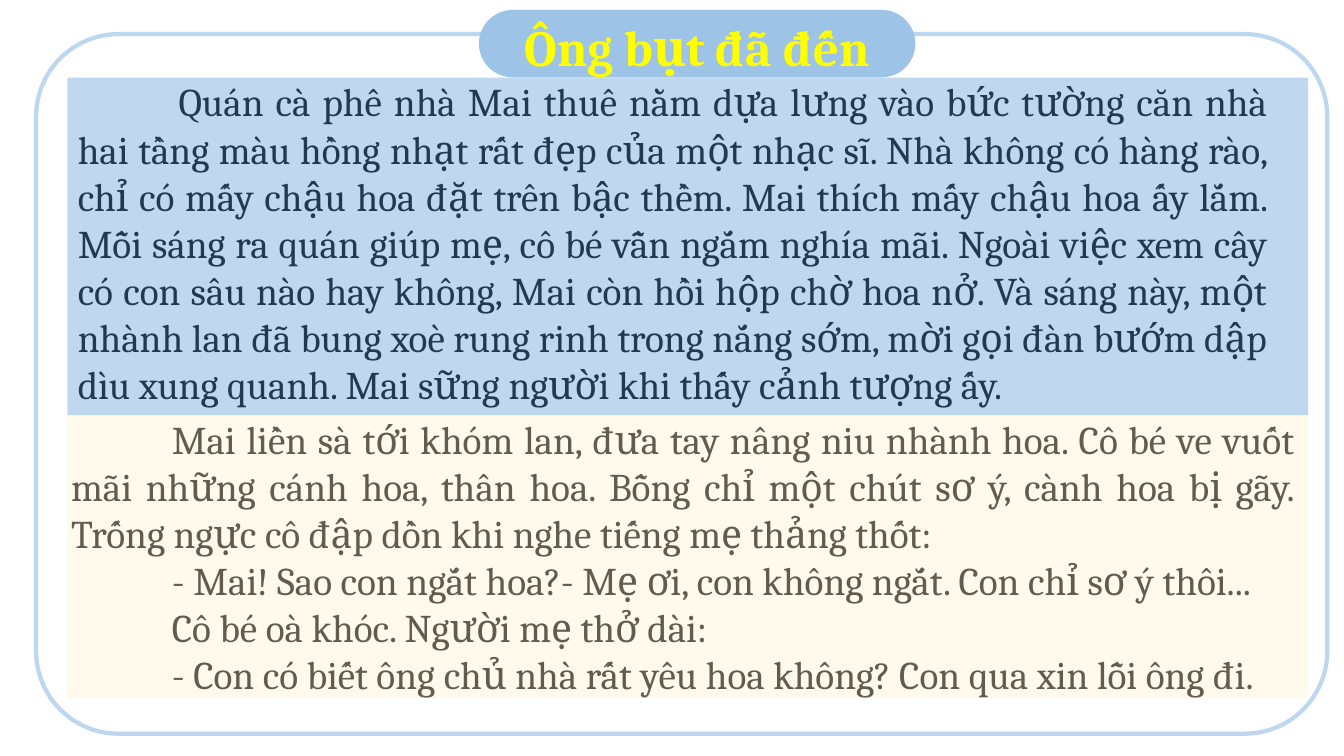
"""Build a Vietnamese reading slide with a title pill and two tinted story passages."""
from dataclasses import dataclass

from lxml import etree
from pptx import Presentation
from pptx.dml.color import RGBColor
from pptx.enum.shapes import MSO_SHAPE
from pptx.enum.text import MSO_ANCHOR, MSO_AUTO_SIZE, PP_ALIGN
from pptx.oxml.ns import qn
from pptx.util import Cm, Pt

RECTANGLE, ROUNDED = MSO_SHAPE.RECTANGLE, MSO_SHAPE.ROUNDED_RECTANGLE
TOP, MIDDLE = MSO_ANCHOR.TOP, MSO_ANCHOR.MIDDLE
CENTER, JUSTIFY = PP_ALIGN.CENTER, PP_ALIGN.JUSTIFY
NO_AUTOFIT = MSO_AUTO_SIZE.NONE

TITLE = "Ông bụt đã đến"
OPENING = [
    "Quán cà phê nhà Mai thuê nằm dựa lưng vào bức tường căn nhà hai tầng màu hồng "
    "nhạt rất đẹp của một nhạc sĩ. Nhà không có hàng rào, chỉ có mấy chậu hoa đặt "
    "trên bậc thềm. Mai thích mấy chậu hoa ấy lắm. Mỗi sáng ra quán giúp mẹ, cô bé "
    "vẫn ngắm nghía mãi. Ngoài việc xem cây có con sâu nào hay không, Mai còn hồi "
    "hộp chờ hoa nở. Và sáng này, một nhành lan đã bung xoè rung rinh trong nắng "
    "sớm, mời gọi đàn bướm dập dìu xung quanh. Mai sững người khi thấy cảnh tượng ấy.",
]
CONTINUATION = [
    "Mai liền sà tới khóm lan, đưa tay nâng niu nhành hoa. Cô bé ve vuốt mãi những "
    "cánh hoa, thân hoa. Bỗng chỉ một chút sơ ý, cành hoa bị gãy. Trống ngực cô đập "
    "dồn khi nghe tiếng mẹ thảng thốt:",
    "- Mai! Sao con ngắt hoa?- Mẹ ơi, con không ngắt. Con chỉ sơ ý thôi...",
    "Cô bé oà khóc. Người mẹ thở dài:",
    "- Con có biết ông chủ nhà rất yêu hoa không? Con qua xin lỗi ông đi.",
]


@dataclass(frozen=True)
class Theme:
    """Colours, type sizes and font of the slide."""
    font: str = "Cambria"
    title_size: int = 36
    body_size: int = 28
    title: str = "FFFF00"
    text: str = "000000"
    paper: str = "FFFFFF"
    frame: str = "BDD7EE"
    pill: str = "9DC3E6"
    opening: str = "5B9BD5"
    continuation: str = "FFF2CC"
    tint_opacity: int = 38


THEME = Theme()
SLIDE_SIZE = (33.87, 19.05)
FRAME_BOX = (0.91, 0.86, 32.54, 17.63)
PILL_BOX = (12.07, 0.25, 11, 1.7)
BAND_LEFT, BAND_WIDTH = 1.7, 31.27
BAND_TOP, BAND_SPLIT, BAND_BOTTOM = 1.96, 10.46, 17.6
OPENING_TEXT_BOX = (1.96, 1.96, 29.97, 8.5)
CONTINUATION_TEXT_BOX = (1.79, BAND_SPLIT, 30.82, BAND_BOTTOM - BAND_SPLIT)
FIRST_LINE_INDENT = 2.54

TITLE_FORMAT = {"size": Pt(THEME.title_size), "bold": True}
BODY_FORMAT = {"size": Pt(THEME.body_size), "bold": False}
TITLE_PARAGRAPH = {"alignment": CENTER, "line_spacing": 1.1}
BODY_PARAGRAPH = {"alignment": JUSTIFY, "line_spacing": 1.0,
                  "space_before": Pt(0), "space_after": Pt(0)}


def apply(target, values):
    """Set every attribute in values on target."""
    for name, value in values.items():
        setattr(target, name, value)


def place(shape, box):
    """Move and size a shape in centimetres."""
    apply(shape, dict(zip(("left", "top", "width", "height"), map(Cm, box))))


def add_panel(slide, kind, box, color, corner=None, opacity=None):
    """Add a flat filled shape without a line."""
    shape = slide.shapes.add_shape(kind, *map(Cm, box))
    shape.shadow.inherit = False
    shape.fill.solid()
    shape.fill.fore_color.rgb = RGBColor.from_string(color)
    shape.line.fill.background()
    if corner is not None:
        shape.adjustments[0] = corner
    if opacity is not None:
        color_element = shape.element.spPr.find(".//" + qn("a:srgbClr"))
        etree.SubElement(color_element, qn("a:alpha"), val=str(opacity * 1000))
    return shape


def write(placeholder, box, lines, color, font_format, paragraph_format, anchor, indent=0):
    """Fill a placeholder and bring it to the front."""
    place(placeholder, box)
    placeholder.element.getparent().append(placeholder.element)
    frame = placeholder.text_frame
    frame.text = "\n".join(lines)
    apply(frame, {"word_wrap": True, "auto_size": NO_AUTOFIT, "vertical_anchor": anchor,
                  "margin_left": 0, "margin_right": 0, "margin_top": 0, "margin_bottom": 0})
    for paragraph in frame.paragraphs:
        apply(paragraph, paragraph_format)
        properties = paragraph.runs[0].font
        apply(properties, {"name": THEME.font, **font_format})
        properties.color.rgb = RGBColor.from_string(color)
        paragraph_element = paragraph.runs[0]._r.getparent().get_or_add_pPr()
        paragraph_element.set("marL", "0")
        paragraph_element.set("indent", str(Cm(indent)))
        etree.SubElement(paragraph_element, qn("a:buNone"))


def main():
    """Assemble and save the slide."""
    presentation = Presentation()
    presentation.slide_width, presentation.slide_height = map(Cm, SLIDE_SIZE)
    slide = presentation.slides.add_slide(presentation.slide_layouts.get_by_name("Two Content"))
    title, opening, continuation = list(slide.placeholders)

    frame = add_panel(slide, ROUNDED, FRAME_BOX, THEME.paper, corner=0.118)
    frame.line.color.rgb = RGBColor.from_string(THEME.frame)
    frame.line.width = Pt(3)
    add_panel(slide, ROUNDED, PILL_BOX, THEME.pill, corner=0.5)

    write(title, PILL_BOX, [TITLE], THEME.title, TITLE_FORMAT, TITLE_PARAGRAPH, MIDDLE)
    for placeholder, box, lines in ((opening, OPENING_TEXT_BOX, OPENING),
                                    (continuation, CONTINUATION_TEXT_BOX, CONTINUATION)):
        write(placeholder, box, lines, THEME.text, BODY_FORMAT, BODY_PARAGRAPH, TOP,
              FIRST_LINE_INDENT)

    for top, bottom, color in ((BAND_SPLIT, BAND_BOTTOM, THEME.continuation),
                               (BAND_TOP, BAND_SPLIT, THEME.opening)):
        add_panel(slide, RECTANGLE, (BAND_LEFT, top, BAND_WIDTH, bottom - top), color,
                  opacity=THEME.tint_opacity)
    presentation.save("out.pptx")


if __name__ == "__main__":
    main()
